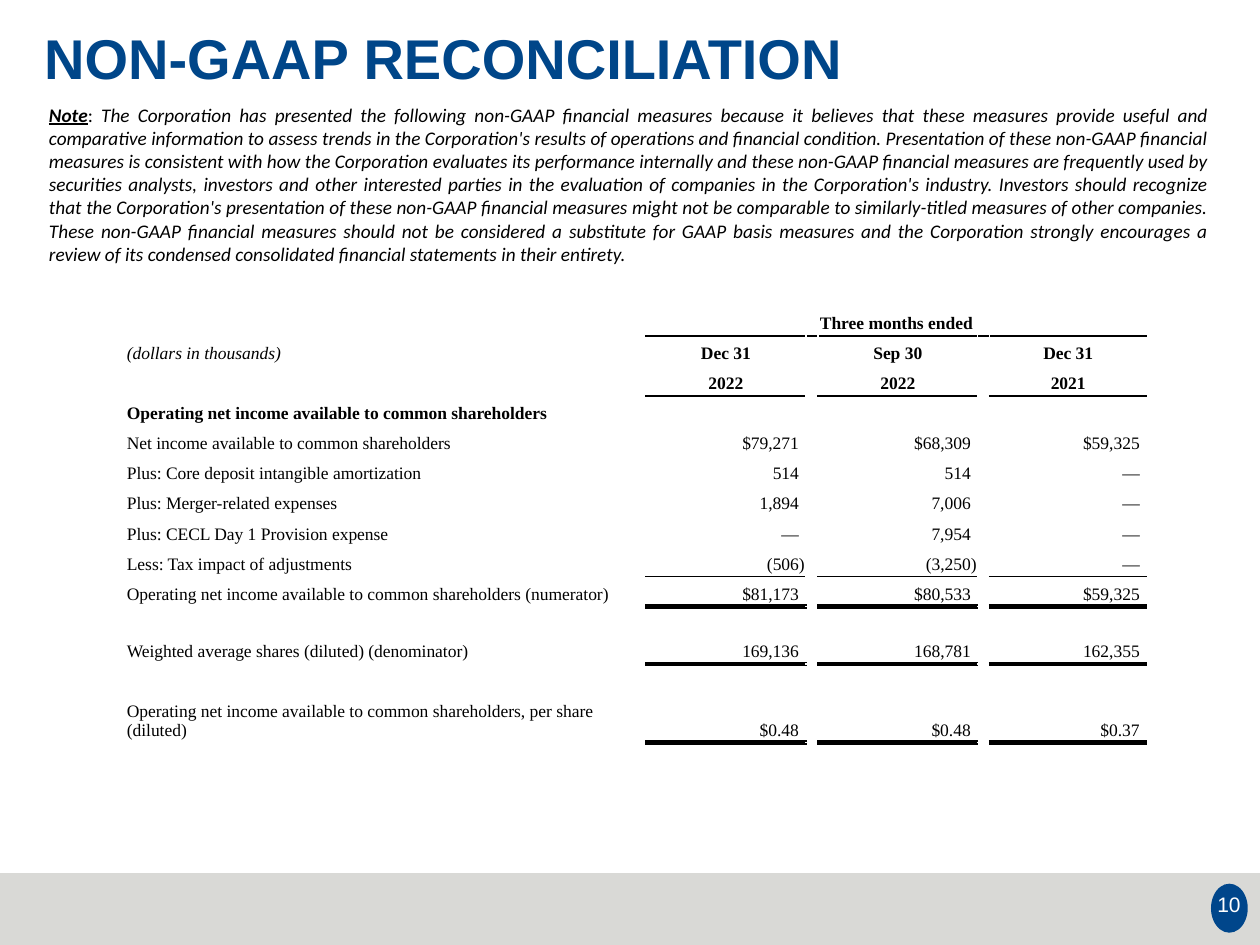
from lxml import etree
from pptx import Presentation
from pptx.dml.color import RGBColor
from pptx.enum.shapes import MSO_SHAPE
from pptx.enum.text import MSO_ANCHOR, MSO_AUTO_SIZE, PP_ALIGN
from pptx.oxml.ns import qn
from pptx.util import Pt

LEFT, CENTER, RIGHT, JUSTIFY = PP_ALIGN.LEFT, PP_ALIGN.CENTER, PP_ALIGN.RIGHT, PP_ALIGN.JUSTIFY
TOP, MIDDLE, BOTTOM = MSO_ANCHOR.TOP, MSO_ANCHOR.MIDDLE, MSO_ANCHOR.BOTTOM
RECT, OVAL = MSO_SHAPE.RECTANGLE, MSO_SHAPE.OVAL
TITLE_ONLY = 5

COLORS = {"blue": "004689", "disc": "00468B", "band": "D9D9D6",
          "black": "000000", "white": "FFFFFF"}

NOTE_SENTENCES = [
    "The Corporation has presented the following non-GAAP financial measures because it "
    "believes that these measures provide useful and comparative information to assess trends "
    "in the Corporation's results of operations and financial condition.",
    "Presentation of these non-GAAP financial measures is consistent with how the Corporation "
    "evaluates its performance internally and these non-GAAP financial measures are frequently "
    "used by securities analysts, investors and other interested parties in the evaluation of "
    "companies in the Corporation's industry.",
    "Investors should recognize that the Corporation's presentation of these non-GAAP financial "
    "measures might not be comparable to similarly-titled measures of other companies.",
    "These non-GAAP financial measures should not be considered a substitute for GAAP basis "
    "measures and the Corporation strongly encourages a review of its condensed consolidated "
    "financial statements in their entirety.",
]

COL_WIDTHS = [298.8, 91.4, 3.4, 91.4, 4.6, 89.7]
VALUE_COLS = [1, 3, 5]
ROW = 17.2
# height, label, values, width of the rule below the values
ROWS = [
    (15.6, "", ["Three months ended"], 1),
    (ROW, "(dollars in thousands)", ["Dec 31", "Sep 30", "Dec 31"], 0),
    (ROW, "", ["2022", "2022", "2021"], 1),
    (2.6, "", [], 0),
    (14.5, "Operating net income available to common shareholders", [], 0),
    (ROW, "Net income available to common shareholders", ["$79,271", "$68,309", "$59,325"], 0),
    (ROW, "Plus: Core deposit intangible amortization", ["514", "514", "—"], 0),
    (ROW, "Plus: Merger-related expenses", ["1,894", "7,006", "—"], 0),
    (ROW, "Plus: CECL Day 1 Provision expense", ["—", "7,954", "—"], 0),
    (ROW, "Less: Tax impact of adjustments", ["(506)", "(3,250)", "—"], 1),
    (ROW, "Operating net income available to common shareholders (numerator)",
     ["$81,173", "$80,533", "$59,325"], 3),
    (15.7, "", [], 0),
    (ROW, "Weighted average shares (diluted) (denominator)",
     ["169,136", "168,781", "162,355"], 3),
    (ROW, "", [], 0),
    (27.9, "Operating net income available to common shareholders, per share (diluted)",
     ["$0.48", "$0.48", "$0.37"], 3),
    (ROW, "", [], 0),
    (ROW, "", [], 0),
]
SPAN_ROW, UNITS_ROW, SECTION_ROW = 0, 1, 4
HEADER_ROWS = range(3)


def format_run(r, font, size, color, bold=False, italic=False, underline=False):
    r.font.name, r.font.size = font, Pt(size)
    r.font.color.rgb = RGBColor.from_string(COLORS[color])
    r.font.bold, r.font.italic, r.font.underline = bold, italic, underline


def set_frame(tf, anchor):
    tf.word_wrap = True
    tf.auto_size = MSO_AUTO_SIZE.NONE
    tf.vertical_anchor = anchor
    tf.margin_left = tf.margin_right = tf.margin_bottom = Pt(7.2)
    tf.margin_top = Pt(4.3)


def add_panel(s, kind, box, color):
    sp = s.shapes.add_shape(kind, *map(Pt, box))
    sp.shadow.inherit = False
    sp.fill.solid()
    sp.fill.fore_color.rgb = RGBColor.from_string(COLORS[color])
    sp.line.fill.background()


def add_text(s, box, align, anchor):
    """Add a text box and return its first paragraph."""
    tf = s.shapes.add_textbox(*map(Pt, box)).text_frame
    set_frame(tf, anchor)
    p = tf.paragraphs[0]
    p.alignment = align
    return p


def set_title(s, text):
    sp = s.shapes.title
    sp.left, sp.top, sp.width, sp.height = map(Pt, (18, 13.7, 696, 82))
    set_frame(sp.text_frame, TOP)
    p = sp.text_frame.paragraphs[0]
    p.text = text
    p.alignment, p.line_spacing = LEFT, 0.9
    format_run(p.runs[0], "Arial", 32, "blue", bold=True)


def add_note(s):
    p = add_text(s, (20.9, 54.7, 677.5, 100.8), JUSTIFY, TOP)
    for text, style in (("Note", {"bold": True, "italic": True, "underline": True}),
                        (": ", {}), (" ".join(NOTE_SENTENCES), {"italic": True})):
        r = p.add_run()
        r.text = text
        format_run(r, "Calibri", 11, "black", **style)


def add_page_number(s, number):
    p = add_text(s, (685.4, 504, 33.8, 28), CENTER, MIDDLE)
    p.text = number
    format_run(p.runs[0], "Arial", 12, "white")


def set_borders(cell, top, bottom):
    """Draw black rules of the given widths; a width of 0 leaves a white edge."""
    tc_pr = cell._tc.get_or_add_tcPr()
    for tag, width in (("a:lnL", 0), ("a:lnR", 0), ("a:lnT", top), ("a:lnB", bottom)):
        ln = etree.SubElement(tc_pr, qn(tag), w=str(Pt(width or 1)))
        fill = etree.SubElement(ln, qn("a:solidFill"))
        etree.SubElement(fill, qn("a:srgbClr"), val=COLORS["black" if width else "white"])


def fill_cell(cell, text, align, margins, bold=False, italic=False):
    cell.vertical_anchor = BOTTOM
    cell.margin_left, cell.margin_right = map(Pt, margins)
    cell.margin_top, cell.margin_bottom = 0, Pt(1.4 if text else 0)
    p = cell.text_frame.paragraphs[0]
    if text:
        p.text = text
        p.alignment, p.line_spacing = align, 1.0
        format_run(p.runs[0], "Times New Roman", 10, "black", bold, italic)
    else:
        p._p.get_or_add_endParaRPr().set("sz", "100")


def has_rule(row, col):
    return col in VALUE_COLS or (row == SPAN_ROW and col > 0)


def add_reconciliation(s):
    frame = s.shapes.add_table(len(ROWS), len(COL_WIDTHS), Pt(70.3), Pt(176.4),
                               Pt(sum(COL_WIDTHS)), Pt(sum(row[0] for row in ROWS)))
    table = frame.table
    table.first_row = table.horz_banding = False
    for column, width in zip(table.columns, COL_WIDTHS):
        column.width = Pt(width)
    rule_above = 0
    for i, (height, label, values, rule) in enumerate(ROWS):
        table.rows[i].height = Pt(height)
        texts = dict(zip(VALUE_COLS, values))
        for j in range(len(COL_WIDTHS)):
            cell = table.cell(i, j)
            set_borders(cell, rule_above if has_rule(i - 1, j) else 0,
                        rule if has_rule(i, j) else 0)
            cell.fill.background()
            text = texts.get(j, "")
            if j == 0:
                fill_cell(cell, label, LEFT, (2.2, 2.2), i == SECTION_ROW, i == UNITS_ROW)
            elif i in HEADER_ROWS:
                fill_cell(cell, text, CENTER, (2.2, 2.2) if text else (0, 0), bold=True)
            else:
                # closing brackets hang to the right of the digits
                fill_cell(cell, text, RIGHT, (0, 0.7 if text.endswith(")") else 4))
        rule_above = rule
    last = len(COL_WIDTHS) - 1
    table.cell(SPAN_ROW, 1).merge(table.cell(SPAN_ROW, last))
    table.cell(SECTION_ROW, 0).merge(table.cell(SECTION_ROW, last))


def main():
    prs = Presentation()
    prs.slide_width, prs.slide_height = Pt(720), Pt(540)
    s = prs.slides.add_slide(prs.slide_layouts[TITLE_ONLY])
    add_panel(s, RECT, (0, 499, 720, 41), "band")
    add_panel(s, OVAL, (692, 505, 21, 28), "disc")
    set_title(s, "NON-GAAP RECONCILIATION")
    add_page_number(s, "10")
    add_note(s)
    add_reconciliation(s)
    prs.save("out.pptx")


if __name__ == "__main__":
    main()
